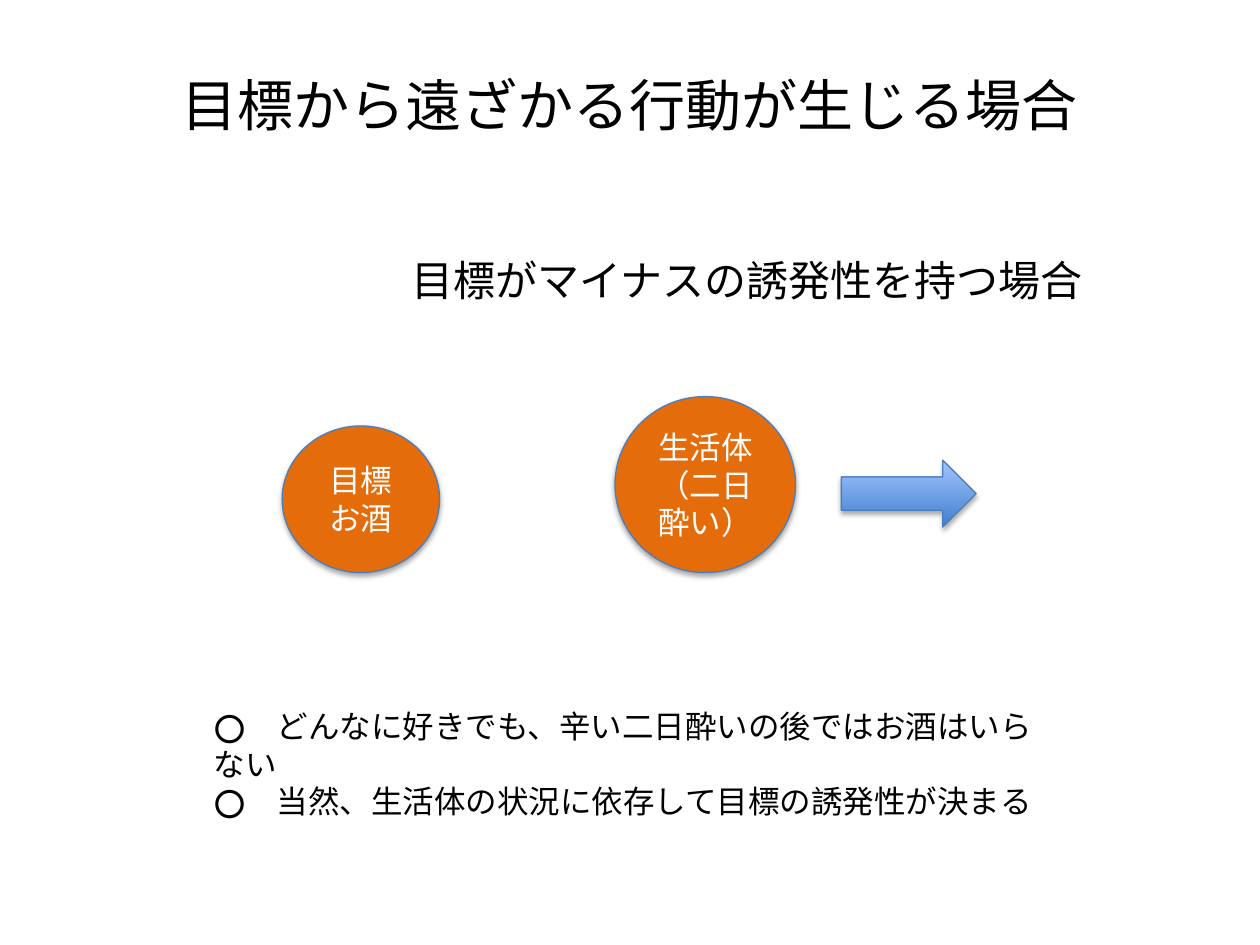
from lxml import etree
from pptx import Presentation
from pptx.dml.color import RGBColor
from pptx.enum import shapes, text
from pptx.oxml.ns import qn
from pptx.util import Pt

FONT = "Calibri"
BLACK, WHITE, ORANGE, BLUE = "000000", "FFFFFF", "E46C0A", "4B7EBC"
GRADIENT = ("3F80CE", "A4C4FF")

TITLE = "目標から遠ざかる行動が生じる場合"
CASE = "目標がマイナスの誘発性を持つ場合"
CIRCLES = [
    ("目標お酒", (161.2, 243.4, 90, 83.8)),
    ("生活体（二日酔い）", (351.4, 226.6, 103.2, 100.6)),
]
ARROW = (480.8, 263, 77, 38.2)
NOTES = [
    "⭕️　どんなに好きでも、辛い二日酔いの後ではお酒はいらない",
    "⭕️　当然、生活体の状況に依存して目標の誘発性が決まる",
]


def rgb(color):
    return RGBColor.from_string(color)


def place(sp, box):
    sp.left, sp.top, sp.width, sp.height = map(Pt, box)


def write(tf, lines, size, color, align):
    tf.word_wrap = True
    for i, line in enumerate(lines):
        p = tf.paragraphs[0] if i == 0 else tf.add_paragraph()
        p.alignment = align
        p.space_before = Pt(0)
        r = p.add_run()
        r.text = line
        r.font.name = FONT
        r.font.size = Pt(size)
        r.font.color.rgb = rgb(color)


def add_figure(s, kind, box):
    sp = s.shapes.add_shape(kind, *map(Pt, box))
    sp.line.color.rgb = rgb(BLUE)
    sp.line.width = Pt(0.75)
    sp.shadow.inherit = False
    effects = sp._element.spPr.find(qn("a:effectLst"))
    shadow = etree.SubElement(effects, qn("a:outerShdw"), blurRad=str(Pt(3.1)),
                              dist=str(Pt(1.8)), dir="5400000", rotWithShape="0")
    tint = etree.SubElement(shadow, qn("a:srgbClr"), val=BLACK)
    etree.SubElement(tint, qn("a:alpha"), val="35000")
    return sp


prs = Presentation()
prs.slide_width, prs.slide_height = Pt(720), Pt(540)
s = prs.slides.add_slide(prs.slide_layouts[1])
left, center = text.PP_ALIGN.LEFT, text.PP_ALIGN.CENTER

title, body = s.placeholders
place(title, (36, 21.6, 648, 75.6))
title.text_frame.vertical_anchor = text.MSO_ANCHOR.MIDDLE
write(title.text_frame, [TITLE], 32, BLACK, center)

place(body, (36, 142, 648, 337.5))
write(body.text_frame, [CASE], 24, BLACK, left)
pPr = body.text_frame.paragraphs[0]._p.get_or_add_pPr()
pPr.set("marL", str(Pt(192)))
pPr.set("indent", "0")
etree.SubElement(pPr, qn("a:buNone"))

for label, box in CIRCLES:
    sp = add_figure(s, shapes.MSO_SHAPE.OVAL, box)
    sp.fill.solid()
    sp.fill.fore_color.rgb = rgb(ORANGE)
    sp.text_frame.vertical_anchor = text.MSO_ANCHOR.MIDDLE
    write(sp.text_frame, [label], 18, WHITE, center)

arrow = add_figure(s, shapes.MSO_SHAPE.RIGHT_ARROW, ARROW)
arrow.fill.gradient()
arrow.fill.gradient_angle = 90
for stop, color in zip(arrow.fill.gradient_stops, GRADIENT):
    stop.color.rgb = rgb(color)

notes = s.shapes.add_textbox(*map(Pt, (115.2, 400.3, 485.3, 51.1)))
write(notes.text_frame, NOTES, 18, BLACK, left)

prs.save("out.pptx")
